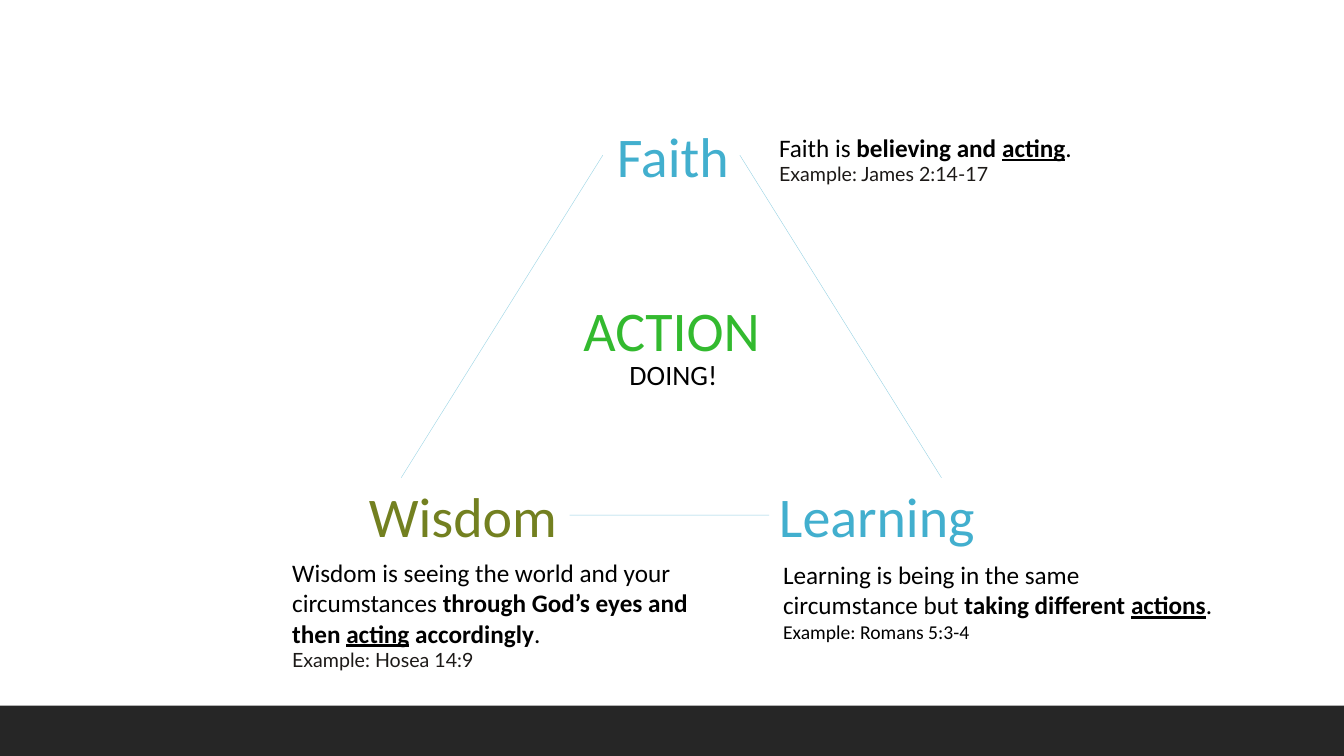
"""Build a slide with a triangle of faith, wisdom and learning around action."""
from lxml.etree import SubElement
from pptx import Presentation
from pptx.dml.color import RGBColor
from pptx.enum.shapes import MSO_CONNECTOR as Connector, MSO_SHAPE as Shape
from pptx.enum.text import MSO_AUTO_SIZE as AutoSize, PP_ALIGN as Align
from pptx.oxml.ns import qn
from pptx.util import Inches, Pt

BLUE, GREEN, OLIVE = "42AFCE", "33BA2F", "738020"
BLACK, INK, CHARCOAL = "000000", "1C1917", "262626"


def color(hex_text):
    """Turn a hex string into a colour."""
    return RGBColor.from_string(hex_text)


class TrianglePage:
    """Hold the style and the current page, on a grid of tenth-inch cells."""

    cell = 0.1
    columns, rows = 133.33, 75
    font, example_font = "Calibri", "Lato"

    def __init__(self):
        """Open a deck with one blank page."""
        self.deck = Presentation()
        self.deck.slide_width = self.grid(self.columns)
        self.deck.slide_height = self.grid(self.rows)
        self.page = self.deck.slides.add_slide(self.deck.slide_layouts[6])

    def grid(self, cells):
        """Turn grid cells into a length."""
        return Inches(cells * self.cell)

    def footer(self, height):
        """Fill a band along the bottom edge."""
        place = (0, self.rows - height, self.columns, height)
        band = self.page.shapes.add_shape(Shape.RECTANGLE, *map(self.grid, place))
        band.shadow.inherit = False
        band.fill.solid()
        band.fill.fore_color.rgb = color(CHARCOAL)
        band.line.fill.background()

    def side(self, *ends):
        """Draw one pale side of the triangle."""
        line = self.page.shapes.add_connector(Connector.STRAIGHT, *map(self.grid, ends))
        line.line.width = Pt(0.25)
        line.line.color.rgb = color(BLUE)
        properties = line._element.spPr
        tint = next(properties.iter(qn("a:srgbClr")))
        SubElement(tint, qn("a:alpha")).set("val", "56000")
        SubElement(properties, qn("a:effectLst"))

    def text_box(self, place, wrap=True):
        """Add an empty text box and return its frame."""
        frame = self.page.shapes.add_textbox(*map(self.grid, place)).text_frame
        frame.word_wrap = wrap
        frame.auto_size = AutoSize.SHAPE_TO_FIT_TEXT
        return frame

    def span(self, para, text, size, fill=BLACK, font=font, bold=False, underline=False):
        """Add one formatted run to a paragraph."""
        run = para.add_run()
        run.text = text
        run.font.name, run.font.size = font, Pt(size)
        run.font.bold, run.font.underline = bold, underline
        run.font.color.rgb = color(fill)

    def label(self, text, left, top, width, fill):
        """Add a large word on a single line."""
        frame = self.text_box((left, top, width, 7.7), wrap=False)
        self.span(frame.paragraphs[0], text, 40, fill)

    def caption(self, text, *place):
        """Add a centred small word."""
        para = self.text_box(place).paragraphs[0]
        para.alignment = Align.CENTER
        self.span(para, text, 20)

    def note(self, place, spans, example, fill=INK, font=example_font):
        """Add a statement with styled spans and its example below."""
        frame = self.text_box(place)
        para = frame.paragraphs[0]
        for text, style in spans:
            self.span(para, text, 18, bold="b" in style, underline="u" in style)
        self.span(frame.add_paragraph(), example, 14, fill, font)


def main():
    """Draw the page and save the deck."""
    page = TrianglePage()
    page.footer(5)

    page.label("ACTION", 56.9, 28.8, 19.7, GREEN)
    page.label("Faith", 60.2, 11.6, 13.2, BLUE)
    page.label("Wisdom", 35.6, 47.3, 20.9, OLIVE)
    page.label("Learning", 76.3, 47.3, 21.6, BLUE)
    page.caption("DOING!", 61.2, 35, 11.2, 4.4)

    page.side(39.8, 47.4, 59.8, 15.4)
    page.side(73.4, 15.4, 93.4, 47.4)
    page.side(56.5, 51.1, 76.3, 51.1)

    page.note(
        (76.3, 12.6, 32.5, 6.4),
        [("Faith is ", ""), ("believing and ", "b"), ("acting", "bu"), (".", "")],
        "Example: James 2:14-17",
    )
    page.note(
        (28, 54.8, 41.7, 12.5),
        [
            ("Wisdom is seeing the world and your circumstances ", ""),
            ("through God’s eyes and then ", "b"),
            ("acting", "bu"),
            (" accordingly", "b"),
            (".", ""),
        ],
        "Example: Hosea 14:9",
    )
    page.note(
        (76.7, 55, 45, 9.4),
        [
            ("Learning is being in the same circumstance but ", ""),
            ("taking different ", "b"),
            ("actions", "bu"),
            (".", ""),
        ],
        "Example: Romans 5:3-4",
        BLACK,
        page.font,
    )
    page.deck.save("out.pptx")


if __name__ == "__main__":
    main()
